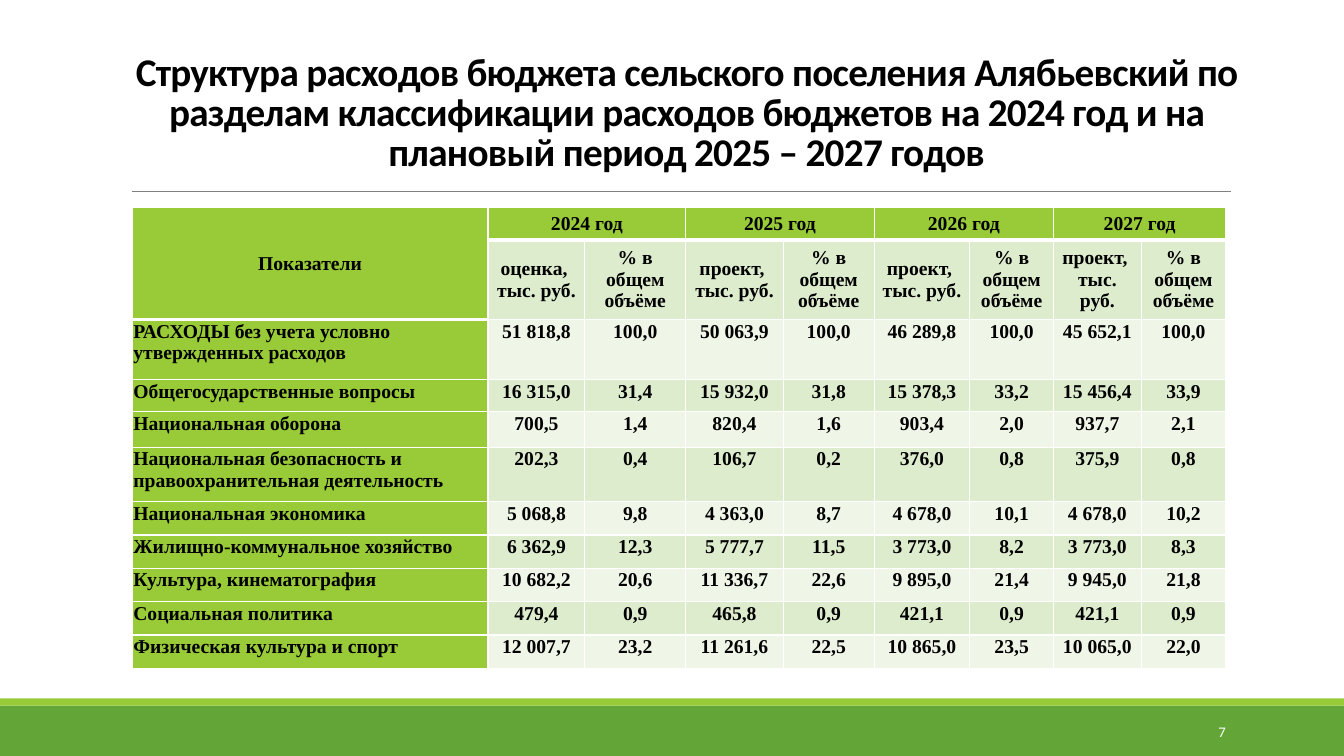
from lxml import etree
from pptx import Presentation
from pptx.dml.color import RGBColor
from pptx.enum import shapes, text
from pptx.oxml import parse_xml
from pptx.oxml.ns import nsdecls, qn
from pptx.util import Cm, Pt

LIME, GREEN, PALE, PALER, WHITE = "99CB38", "63A537", "DEECCE", "EFF6E8", "FFFFFF"
CENTER, LEFT, RIGHT = text.PP_ALIGN.CENTER, text.PP_ALIGN.LEFT, text.PP_ALIGN.RIGHT
TOP, MIDDLE, BOTTOM = text.MSO_ANCHOR.TOP, text.MSO_ANCHOR.MIDDLE, text.MSO_ANCHOR.BOTTOM


def color(code):
    return RGBColor.from_string(code)


def write(frame, content, size=14, font="Times New Roman", ink="000000", bold=True,
          align=CENTER, spacing=None, tracking=None):
    """Fill a text frame; each line of content becomes a paragraph, tracking is in points."""
    frame.text = content
    for paragraph in frame.paragraphs:
        paragraph.alignment = align
        paragraph.line_spacing = spacing
        for run in paragraph.runs:
            run.font.size, run.font.name, run.font.bold = Pt(size), font, bold
            run.font.color.rgb = color(ink)
            if tracking:
                run.font._element.set("spc", str(int(tracking * 100)))


prs = Presentation()
prs.slide_width, prs.slide_height = Cm(33.87), Cm(19.05)
slide = prs.slides.add_slide(prs.slide_layouts[5])

# Footer bands and the rule under the title
for top, height, fill in [(17.78, 1.27, GREEN), (17.6, 0.18, LIME)]:
    band = slide.shapes.add_shape(shapes.MSO_SHAPE.RECTANGLE, 0, Cm(top), prs.slide_width, Cm(height))
    band.shadow.inherit = False
    band.fill.solid()
    band.fill.fore_color.rgb = color(fill)
    band.line.fill.background()

rule = slide.shapes.add_connector(shapes.MSO_CONNECTOR.STRAIGHT, Cm(3.33), Cm(4.83), Cm(31.01), Cm(4.83))
rule.line.color.rgb = color("808080")
rule.line.width = Pt(0.5)
etree.SubElement(rule._element.spPr, qn("a:effectLst"))

title = slide.shapes.title
title.left, title.top, title.width, title.height = Cm(2.62), Cm(2.01), Cm(29.36), Cm(2.51)
title.text_frame.auto_size = text.MSO_AUTO_SIZE.NONE
title.text_frame.vertical_anchor = BOTTOM
write(title.text_frame,
      "Структура расходов бюджета сельского поселения Алябьевский по разделам "
      "классификации расходов бюджетов на 2024 год и на плановый период 2025 – 2027 годов",
      size=28, font="Calibri", spacing=0.85, tracking=-0.5)

# Expenditure table: amount and share for each year
years = ["2024 год", "2025 год", "2026 год", "2027 год"]
year_row, measure_row = ["Показатели"], [""]
for year in years:
    amount = "оценка, " if year == years[0] else "проект, "
    year_row += [year, ""]
    measure_row += [amount + "\nтыс. руб.", "% в общем объёме"]

expenses = [
    ["РАСХОДЫ без учета условно утвержденных расходов",
     "51 818,8", "100,0", "50 063,9", "100,0", "46 289,8", "100,0", "45 652,1", "100,0"],
    ["Общегосударственные вопросы",
     "16 315,0", "31,4", "15 932,0", "31,8", "15 378,3", "33,2", "15 456,4", "33,9"],
    ["Национальная оборона",
     "700,5", "1,4", "820,4", "1,6", "903,4", "2,0", "937,7", "2,1"],
    ["Национальная безопасность и правоохранительная деятельность",
     "202,3", "0,4", "106,7", "0,2", "376,0", "0,8", "375,9", "0,8"],
    ["Национальная экономика",
     "5 068,8", "9,8", "4 363,0", "8,7", "4 678,0", "10,1", "4 678,0", "10,2"],
    ["Жилищно-коммунальное хозяйство",
     "6 362,9", "12,3", "5 777,7", "11,5", "3 773,0", "8,2", "3 773,0", "8,3"],
    ["Культура, кинематография",
     "10 682,2", "20,6", "11 336,7", "22,6", "9 895,0", "21,4", "9 945,0", "21,8"],
    ["Социальная политика",
     "479,4", "0,9", "465,8", "0,9", "421,1", "0,9", "421,1", "0,9"],
    ["Физическая культура и спорт",
     "12 007,7", "23,2", "11 261,6", "22,5", "10 865,0", "23,5", "10 065,0", "22,0"],
]
rows = [year_row, measure_row] + expenses
widths = [8.97, 2.44, 2.54, 2.46, 2.29, 2.41, 2.11, 2.21, 2.13]
heights = [0.81, 2.01, 1.52, 0.81, 0.89, 1.37] + [0.84] * 5

budget = slide.shapes.add_table(len(rows), len(widths), Cm(3.33), Cm(5.23),
                                Cm(sum(widths)), Cm(sum(heights))).table
for column, width in zip(budget.columns, widths):
    column.width = Cm(width)
for row, height in zip(budget.rows, heights):
    row.height = Cm(height)

for r, values in enumerate(rows):
    for c, value in enumerate(values):
        cell = budget.cell(r, c)
        header = r < 2
        write(cell.text_frame, value, align=CENTER if header or c else LEFT)
        cell.vertical_anchor = MIDDLE if header else TOP
        cell.margin_left = cell.margin_right = Cm(0.18 if header else 0.03)
        cell.margin_top, cell.margin_bottom = Cm(0 if header else 0.03), 0
        heading_end = 1 if c == 0 else 0
        thick = {"B": r <= heading_end, "T": r == heading_end + 1}
        for side in "LRTB":
            line_width = Pt(3 if thick.get(side) else 1)
            cell._tc.get_or_add_tcPr().append(parse_xml(
                f'<a:ln{side} {nsdecls("a")} w="{line_width}"><a:solidFill>'
                f'<a:srgbClr val="{WHITE}"/></a:solidFill></a:ln{side}>'))
        cell.fill.solid()
        cell.fill.fore_color.rgb = color(LIME if r == 0 or c == 0 else PALE if r % 2 else PALER)

budget.cell(0, 0).merge(budget.cell(1, 0))
for c in range(1, len(widths), 2):
    budget.cell(0, c).merge(budget.cell(0, c + 1))

page_number = slide.shapes.add_textbox(Cm(27.51), Cm(17.93), Cm(3.63), Cm(1.02)).text_frame
page_number.word_wrap = True
page_number.vertical_anchor = MIDDLE
write(page_number, "7", size=10.5, font="Calibri", ink=WHITE, bold=False, align=RIGHT)

prs.save("out.pptx")
